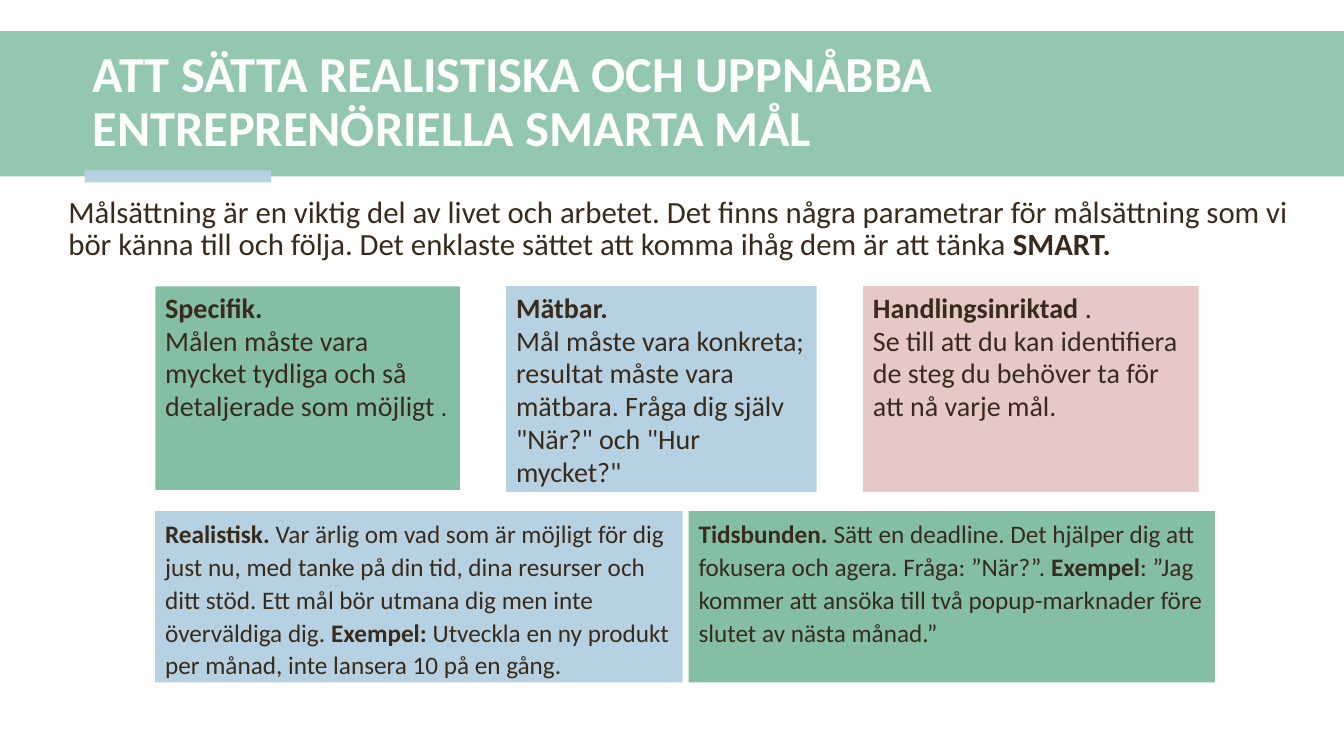
from pptx import Presentation, util as u
from pptx.dml.color import RGBColor
from pptx.enum import shapes, text

# Content: each paragraph is a list of runs (words, bold[, size])
TITLE = [[("ATT SÄTTA REALISTISKA OCH UPPNÅBBA ENTREPRENÖRIELLA SMARTA MÅL", True)]]
INTRO = [[
    ("Målsättning är en viktig del av livet och arbetet. Det finns några parametrar "
     "för målsättning som vi bör känna till och följa. Det enklaste sättet att komma "
     "ihåg dem är att tänka ", False),
    ("SMART.", True)]]
# Cards: width, height, fill, paragraphs
TOP = [
    (3.02, 2.02, "green", [
        [("Specifik.", True)],
        [("Målen måste vara mycket tydliga och så detaljerade som möjligt ", False),
         (".", False, 18)]]),
    (3.08, 2.04, "blue", [
        [("Mätbar.", True)],
        [("Mål måste vara konkreta; resultat måste vara mätbara. Fråga dig själv "
          "\"När?\" och \"Hur mycket?\"", False)]]),
    (3.33, 2.04, "pink", [
        [("Handlingsinriktad ", True), (".", False)],
        [("Se till att du kan identifiera de steg du behöver ta för att nå varje mål.",
          False)]]),
]
LOW = [
    (5.23, 1.7, "blue", [[
        ("Realistisk. ", True),
        ("Var ärlig om vad som är möjligt för dig just nu, med tanke på din tid, dina "
         "resurser och ditt stöd. Ett mål bör utmana dig men inte överväldiga dig. ", False),
        ("Exempel: ", True),
        ("Utveckla en ny produkt per månad, inte lansera 10 på en gång.", False)]]),
    (5.22, 1.7, "green", [[
        ("Tidsbunden. ", True),
        ("Sätt en deadline. Det hjälper dig att fokusera och agera. Fråga: ”När?”. ", False),
        ("Exempel", True),
        (": ”Jag kommer att ansöka till två popup-marknader före slutet av nästa månad.”",
         False)]]),
]
# Rows: cards, top, gap, type size
ROWS = [(TOP, 2.84, 0.46, "card"), (LOW, 5.07, 0.06, "small")]
LEFT = 1.54

THEME = {
    "font": "Calibri",
    "color": {"band": "94C7B0", "green": "84BFA4", "blue": "B6D1E1",
              "pink": "E6C8C7", "ink": "382B1B", "white": "FFFFFF"},
    "size": {"title": 36, "intro": 22, "card": 20, "small": 18},
    "lead": u.Pt(23.4),
}


def tint(name):
    return RGBColor.from_string(THEME["color"][name])


def block(slide, box, fill):
    part = slide.shapes.add_shape(shapes.MSO_SHAPE.RECTANGLE, *map(u.Inches, box))
    part.shadow.inherit = False
    part.fill.solid()
    part.fill.fore_color.rgb = tint(fill)
    part.line.fill.background()
    return part


def write(part, paras, size, color="ink", lead=THEME["lead"],
          anchor=text.MSO_ANCHOR.TOP):
    frame = part.text_frame
    frame.word_wrap = True
    frame.vertical_anchor = anchor
    for i, runs in enumerate(paras):
        para = frame.paragraphs[0] if i == 0 else frame.add_paragraph()
        para.alignment = text.PP_ALIGN.LEFT
        para.line_spacing = lead
        for words, bold, *own in runs:
            run = para.add_run()
            run.text = words
            font = run.font
            font.name = THEME["font"]
            font.size = u.Pt(own[0] if own else THEME["size"][size])
            font.bold = bold
            font.color.rgb = tint(color)


def main():
    deck = Presentation()
    deck.slide_width, deck.slide_height = u.Inches(13.33), u.Inches(7.5)
    slide = deck.slides.add_slide(deck.slide_layouts[6])

    # Title band and accent bar
    block(slide, (0, 0.31, 13.33, 1.44), "band")
    block(slide, (0.84, 1.69, 1.85, 0.12), "blue")

    # Title and intro
    head = slide.shapes.add_textbox(*map(u.Inches, (0.82, 0.41, 12.27, 1.23)))
    write(head, TITLE, "title", "white", 0.9, text.MSO_ANCHOR.MIDDLE)
    intro = slide.shapes.add_textbox(*map(u.Inches, (0.58, 1.9, 12.45, 0.8)))
    write(intro, INTRO, "intro")

    # Rows of cards, placed from left to right
    for cards, top, gap, size in ROWS:
        x = LEFT
        for width, height, fill, paras in cards:
            write(block(slide, (x, top, width, height), fill), paras, size)
            x += width + gap

    deck.save("out.pptx")


if __name__ == "__main__":
    main()
